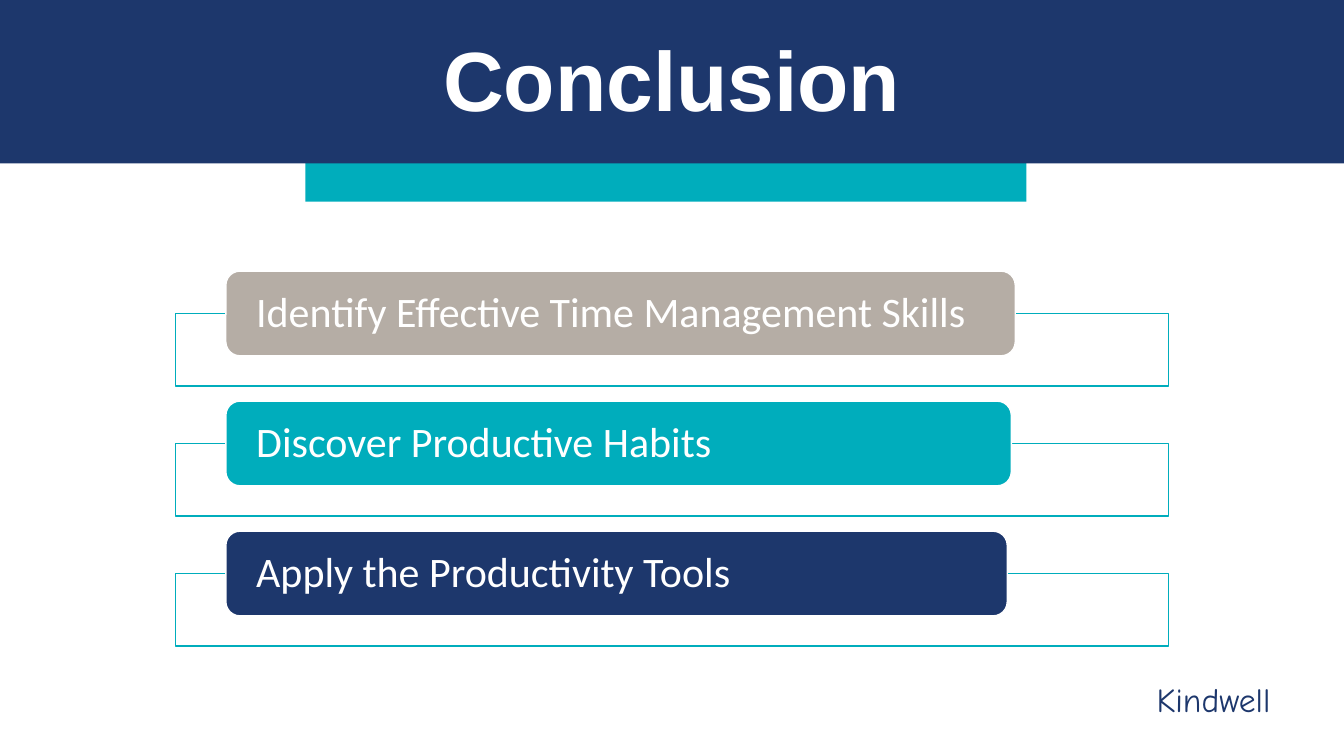
from dataclasses import dataclass

from lxml import etree
from pptx import Presentation
from pptx import util as u
from pptx.dml.color import RGBColor
from pptx.enum import shapes, text
from pptx.oxml.ns import qn


@dataclass(frozen=True)
class Theme:
    navy: str = "1D376C"
    teal: str = "00ADBC"
    taupe: str = "B5ADA5"
    white: str = "FFFFFF"
    title_size: int = 60
    takeaway_size: int = 30
    brand_size: int = 24


@dataclass(frozen=True)
class Box:
    left: float
    top: float
    width: float
    height: float

    def lengths(self) -> tuple:
        return tuple(map(u.Inches, (self.left, self.top, self.width, self.height)))


@dataclass(frozen=True)
class Takeaway:
    wording: str
    color: str


THEME = Theme()
TAKEAWAYS = (
    Takeaway("Identify Effective Time Management Skills", THEME.taupe),
    Takeaway("Discover Productive Habits", THEME.teal),
    Takeaway("Apply the Productivity Tools", THEME.navy),
)
FIRST_TOP = 2.69
ROW_PITCH = 1.29
PILL_WIDTH = 7.83
PILL_NARROWING = 0.04
FRAME_DROP = 0.42


def add_panel(slide, kind, box: Box, fill: str, line: str = "", opacity: int = 100):
    """Draw a filled shape, with an outline if a line colour is given."""
    shape = slide.shapes.add_shape(kind, *box.lengths())
    shape.shadow.inherit = False
    shape.fill.solid()
    shape.fill.fore_color.rgb = RGBColor.from_string(fill)
    if opacity < 100:
        color = shape.element.spPr.find(qn("a:solidFill"))[0]
        etree.SubElement(color, qn("a:alpha"), val=str(opacity * 1000))
    if line:
        shape.line.color.rgb = RGBColor.from_string(line)
        shape.line.width = u.Pt(1)
    else:
        shape.line.fill.background()
    return shape


def write(shape, wording: str, color: str, font: dict, paragraph_format: dict,
          frame_format: dict) -> None:
    """Put one formatted paragraph into a shape."""
    frame = shape.text_frame
    frame.text = wording
    paragraph = frame.paragraphs[0]
    run = paragraph.runs[0]
    run.font.color.rgb = RGBColor.from_string(color)
    for target, values in ((run.font, font), (paragraph, paragraph_format),
                           (frame, frame_format)):
        for name, value in values.items():
            setattr(target, name, value)


def add_header(slide) -> None:
    rectangle = shapes.MSO_SHAPE.RECTANGLE
    add_panel(slide, rectangle, Box(3.03, 1.38, 7.15, 0.62), THEME.teal)
    add_panel(slide, rectangle, Box(-0.12, 0, 13.53, 1.62), THEME.navy)

    title = slide.shapes.title
    title.left, title.top, title.width, title.height = Box(0, 0.32, 13.33, 1.03).lengths()
    write(title, "Conclusion", THEME.white,
          {"name": "Arial", "size": u.Pt(THEME.title_size), "bold": True},
          {"alignment": text.PP_ALIGN.CENTER, "line_spacing": u.Pt(65)},
          {"vertical_anchor": text.MSO_ANCHOR.TOP, "word_wrap": True,
           "auto_size": text.MSO_AUTO_SIZE.NONE})
    # Bring the title in front of the header bars
    title.element.getparent().append(title.element)


def add_brand(slide) -> None:
    brand = slide.shapes.add_textbox(*Box(10.94, 6.69, 2.19, 0.5).lengths())
    write(brand, "Kindwell", THEME.navy,
          {"name": "Comic Neue", "size": u.Pt(THEME.brand_size)},
          {"alignment": text.PP_ALIGN.CENTER},
          {"word_wrap": True})


def add_takeaway(slide, row: int, takeaway: Takeaway) -> None:
    top = FIRST_TOP + row * ROW_PITCH
    add_panel(slide, shapes.MSO_SHAPE.RECTANGLE,
              Box(1.74, top + FRAME_DROP, 9.85, 0.72),
              THEME.white, THEME.teal, opacity=90)
    pill = add_panel(slide, shapes.MSO_SHAPE.ROUNDED_RECTANGLE,
                     Box(2.24, top, PILL_WIDTH - row * PILL_NARROWING, 0.84),
                     takeaway.color, THEME.white)
    write(pill, takeaway.wording, THEME.white,
          {"name": "Calibri", "size": u.Pt(THEME.takeaway_size)},
          {"alignment": text.PP_ALIGN.LEFT, "line_spacing": 0.9},
          {"vertical_anchor": text.MSO_ANCHOR.MIDDLE, "word_wrap": True,
           "margin_left": u.Inches(0.26), "margin_right": u.Inches(0.26),
           "margin_top": 0, "margin_bottom": 0})


def main() -> None:
    presentation = Presentation()
    presentation.slide_width = u.Inches(13.33)
    presentation.slide_height = u.Inches(7.5)
    # Title-only layout
    slide = presentation.slides.add_slide(presentation.slide_layouts[5])

    add_header(slide)
    add_brand(slide)
    for row, takeaway in enumerate(TAKEAWAYS):
        add_takeaway(slide, row, takeaway)

    presentation.save("out.pptx")


if __name__ == "__main__":
    main()
